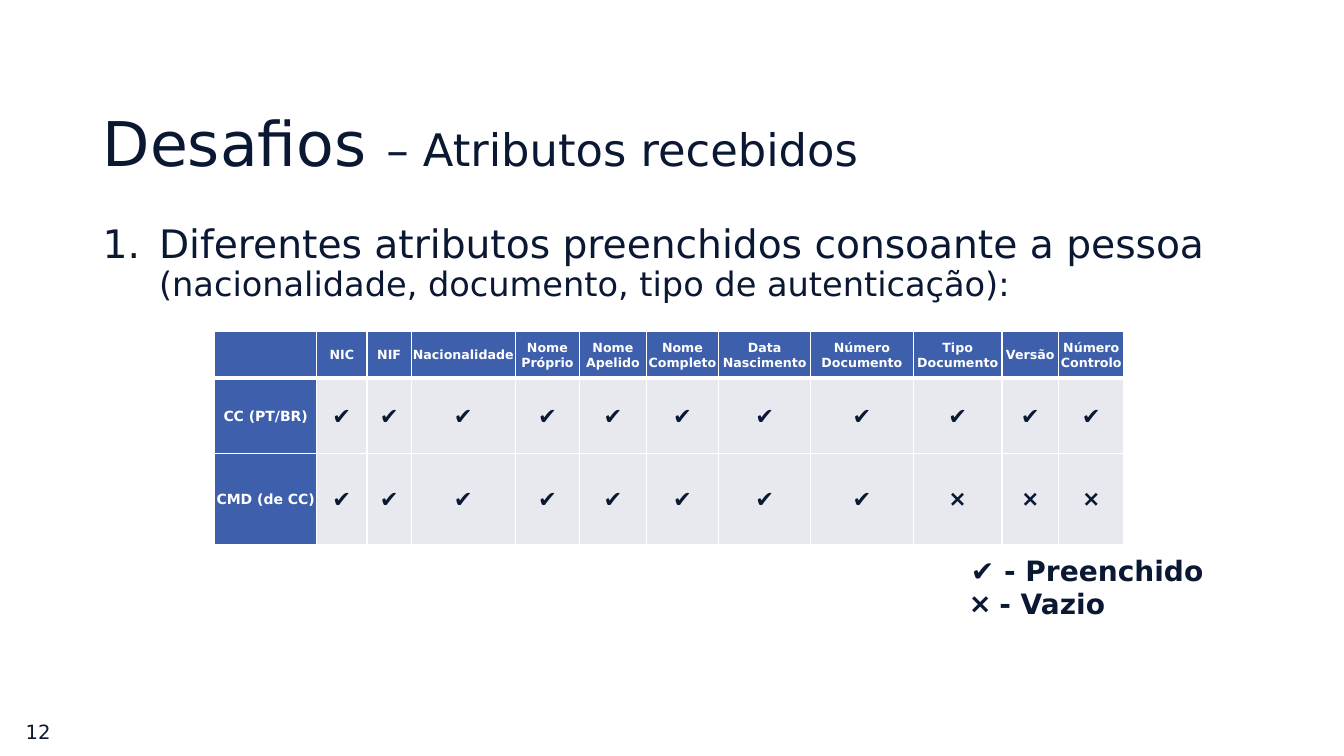
"""Build the slide on the attributes received for each kind of person."""
import dataclasses

import lxml.etree
import pptx
import pptx.dml.color
import pptx.enum.text
import pptx.oxml.ns
import pptx.util

PX = 9144
ANCHOR = pptx.enum.text.MSO_ANCHOR
ALIGN = pptx.enum.text.PP_ALIGN


@dataclasses.dataclass(frozen=True)
class Theme:
    """Colours, font and type sizes of the deck."""
    font: str = "DejaVu Sans"
    ink: str = "0A1833"
    blue: str = "3E60AC"
    pale: str = "E8E9EE"
    white: str = "FFFFFF"
    title: int = 44
    subtitle: int = 32
    body: int = 28
    detail: int = 24
    legend: int = 20
    mark: int = 16
    number: int = 14
    row_label: int = 10
    header: int = 9


THEME = Theme()
FILLED, EMPTY = "✔️", "❌"
HEADERS = ["", "NIC", "NIF", "Nacionalidade ", "Nome Próprio", "Nome Apelido",
           "Nome Completo", "Data Nascimento", "Número Documento",
           "Tipo Documento", "Versão", "Número Controlo"]
ROWS = [HEADERS,
        ["CC (PT/BR)"] + [FILLED] * 11,
        ["CMD (de CC)"] + [FILLED] * 8 + [EMPTY] * 3]
COLUMN_WIDTHS = [101, 50, 44, 103, 64, 66, 72, 91, 102, 88, 56, 65]
ROW_HEIGHTS = [46, 75, 90]


def px(n):
    """Turn px into EMU."""
    return pptx.util.Emu(n * PX)


def rgb(code):
    """Turn a hex code into a colour."""
    return pptx.dml.color.RGBColor.from_string(code)


def add_run(p, text, size, color=THEME.ink, bold=False):
    """Add one styled run to a paragraph."""
    r = p.add_run()
    r.text = text
    r.font.name = THEME.font
    r.font.size = pptx.util.Pt(size)
    r.font.bold = bold
    r.font.color.rgb = rgb(color)


def add_text(s, box, anchor=ANCHOR.TOP):
    """Add a wrapping text box and return its frame."""
    tf = s.shapes.add_textbox(*map(px, box)).text_frame
    tf.word_wrap = True
    tf.vertical_anchor = anchor
    return tf


def add_title(s, box):
    """Add the title with its smaller second part."""
    p = add_text(s, box, ANCHOR.MIDDLE).paragraphs[0]
    p.line_spacing = 0.9
    add_run(p, "Desafios ", THEME.title)
    add_run(p, "– Atributos recebidos", THEME.subtitle)


def add_body(s, box):
    """Add the numbered statement."""
    p = add_text(s, box).paragraphs[0]
    pPr = p._p.get_or_add_pPr()
    pPr.set("marL", str(px(56)))
    pPr.set("indent", str(px(-56)))
    lxml.etree.SubElement(pPr, pptx.oxml.ns.qn("a:buAutoNum"), type="arabicPeriod")
    p.line_spacing = 0.9
    add_run(p, "Diferentes atributos preenchidos consoante a pessoa ", THEME.body)
    add_run(p, "(nacionalidade, documento, tipo de autenticação):", THEME.detail)


def set_borders(cell, top, bottom):
    """Draw white cell borders, with top and bottom widths in points."""
    tcPr = cell._tc.get_or_add_tcPr()
    widths = {"lnL": 1, "lnR": 1, "lnT": top, "lnB": bottom}
    for i, (side, width) in enumerate(widths.items()):
        ln = lxml.etree.Element(pptx.oxml.ns.qn(f"a:{side}"), w=str(pptx.util.Pt(width)))
        fill = lxml.etree.SubElement(ln, pptx.oxml.ns.qn("a:solidFill"))
        lxml.etree.SubElement(fill, pptx.oxml.ns.qn("a:srgbClr"), val=THEME.white)
        tcPr.insert(i, ln)


def fill_cell(cell, text, row, col):
    """Style one table cell by its place and write its text."""
    label = row == 0 or col == 0
    cell.fill.solid()
    cell.fill.fore_color.rgb = rgb(THEME.blue if label else THEME.pale)
    set_borders(cell, 3 if row == 1 else 1, 3 if row == 0 else 1)
    cell.vertical_anchor = ANCHOR.MIDDLE
    cell.margin_left = cell.margin_top = cell.margin_right = px(1)
    cell.margin_bottom = 0
    p = cell.text_frame.paragraphs[0]
    p.alignment = ALIGN.CENTER
    if text:
        size = THEME.header if row == 0 else THEME.row_label if col == 0 else THEME.mark
        add_run(p, text, size, THEME.white if label else THEME.ink, True)


def add_attributes(s, box):
    """Add the table of attributes by authentication type."""
    table = s.shapes.add_table(len(ROWS), len(HEADERS), *map(px, box)).table
    for column, width in zip(table.columns, COLUMN_WIDTHS):
        column.width = px(width)
    for i, (height, texts) in enumerate(zip(ROW_HEIGHTS, ROWS)):
        table.rows[i].height = px(height)
        for j, text in enumerate(texts):
            fill_cell(table.cell(i, j), text, i, j)


def add_legend(s, box):
    """Add the key to the two marks."""
    tf = add_text(s, box)
    add_run(tf.paragraphs[0], f"{FILLED} - Preenchido", THEME.legend, bold=True)
    add_run(tf.add_paragraph(), f"{EMPTY} - Vazio", THEME.legend, bold=True)


def add_number(s, box):
    """Add the slide number."""
    p = add_text(s, box, ANCHOR.MIDDLE).paragraphs[0]
    p.alignment = ALIGN.RIGHT
    add_run(p, "12", THEME.number)


def main():
    """Build and save the deck."""
    prs = pptx.Presentation()
    prs.slide_width, prs.slide_height = px(1333), px(750)
    s = prs.slides.add_slide(prs.slide_layouts[6])
    add_title(s, (92, 73, 1150, 145))
    add_attributes(s, (213, 329, sum(COLUMN_WIDTHS), sum(ROW_HEIGHTS)))
    add_legend(s, (953, 544, 289, 151))
    add_number(s, (0, 706, 60, 40))
    add_body(s, (92, 218, 1150, 459))
    prs.save("out.pptx")


if __name__ == "__main__":
    main()
